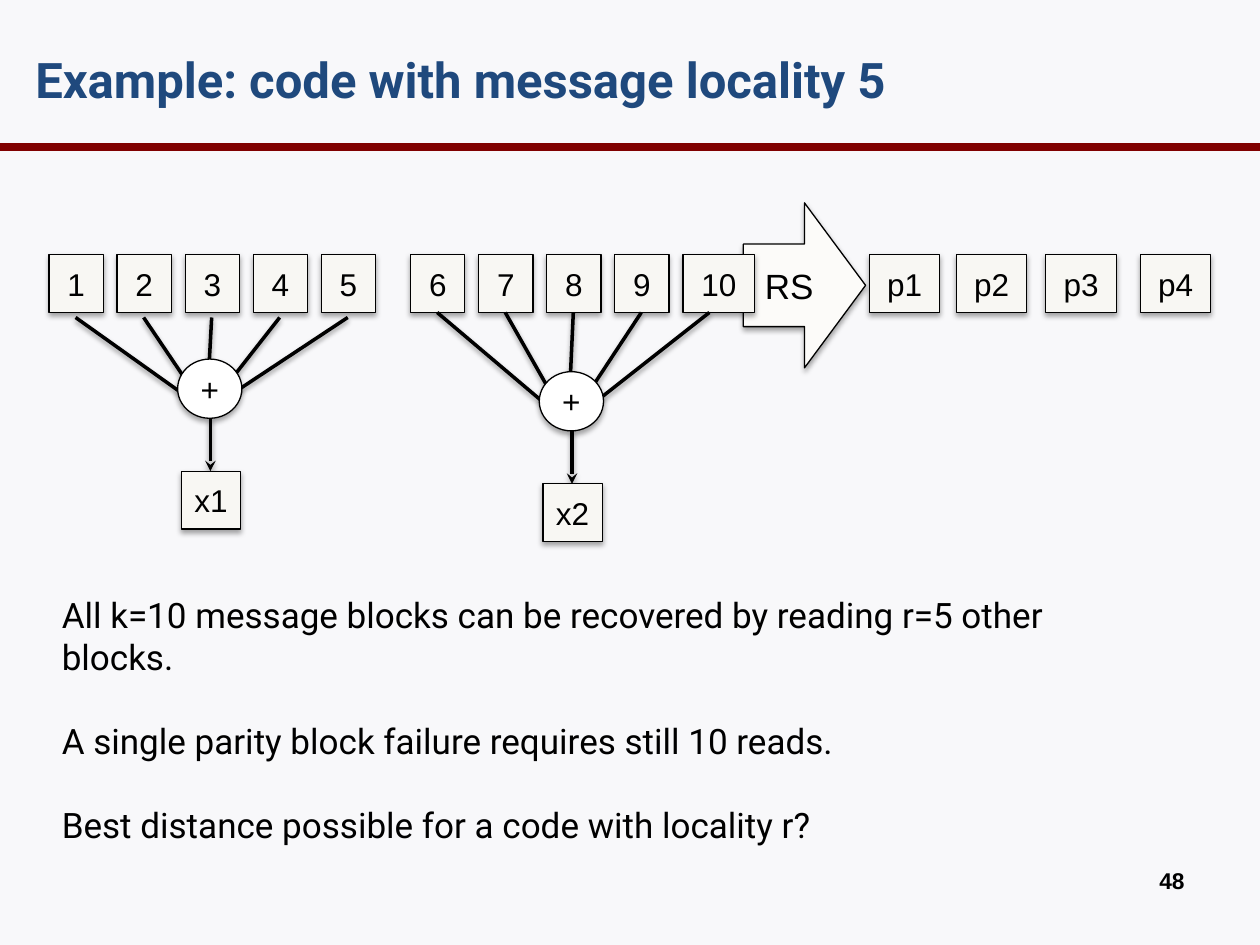
from pptx import Presentation
from pptx.dml.color import RGBColor
from pptx.enum.shapes import MSO_CONNECTOR as Conn, MSO_SHAPE as Kind
from pptx.enum.text import MSO_ANCHOR as Anchor, MSO_AUTO_SIZE as Fit, PP_ALIGN as Align
from pptx.oxml import parse_xml
from pptx.oxml.ns import nsdecls
from pptx.util import Inches, Pt

COLS, ROWS = 100, 75
STEP = 5.4
TOP, HIGH = 20.2, 4.6
INK, PAPER = "000000", "F8F7F3"
NOTES = [
    "All k=10 message blocks can be recovered by reading r=5 other blocks.",
    "A single parity block failure requires still 10 reads.",
    "Best distance possible for a code with locality r?",
]


def grid(*cells):
    return [Inches(cell / 10) for cell in cells]


def paint(hue):
    return RGBColor.from_string(hue)


def write(para, text, size, font="Arial", hue=INK, bold=False, align=Align.LEFT):
    para.alignment = align
    run = para.add_run()
    run.text = text
    run.font.size = Pt(size)
    run.font.name = font
    run.font.bold = bold
    run.font.color.rgb = paint(hue)


def shade(shape, alpha, dist):
    shape._element.spPr.append(parse_xml(
        f'<a:effectLst {nsdecls("a")}><a:outerShdw blurRad="{Pt(3.1)}" '
        f'dist="{Pt(dist)}" dir="5400000" rotWithShape="0"><a:srgbClr val="{INK}">'
        f'<a:alpha val="{alpha}000"/></a:srgbClr></a:outerShdw></a:effectLst>'))


def block(slide, text, x, y=TOP, wide=4.3, high=HIGH, kind=Kind.RECTANGLE,
          fill=PAPER, size=18):
    shape = slide.shapes.add_shape(kind, *grid(x, y, wide, high))
    shape.fill.solid()
    shape.fill.fore_color.rgb = paint(fill)
    shape.line.color.rgb = paint(INK)
    shape.line.width = Pt(0.75)
    shade(shape, 35, 1.8)
    frame = shape.text_frame
    frame.word_wrap = False
    frame.vertical_anchor = Anchor.MIDDLE
    write(frame.paragraphs[0], text, size, align=Align.CENTER)


def line(slide, x1, y1, x2, y2, hue=INK, width=2, head=False, flat=False):
    edge = slide.shapes.add_connector(Conn.STRAIGHT, *grid(x1, y1, x2, y2))
    edge.line.color.rgb = paint(hue)
    edge.line.width = Pt(width)
    if head:
        edge.line._get_or_add_ln().append(
            parse_xml(f'<a:tailEnd {nsdecls("a")} type="stealth"/>'))
    if flat:
        edge._element.spPr.append(parse_xml(f'<a:effectLst {nsdecls("a")}/>'))
    else:
        shade(edge, 38, 1.6)


def tree(slide, label, left, start, hub):
    for i in range(5):
        line(slide, left + 2.1 + i * STEP, start, left + 12.5, hub + 4.1)
    line(slide, left + 12.8, hub + 4.7, left + 12.8, hub + 8.9, head=True)
    block(slide, "+", left + 10.2, hub, 5.1, 4.7, Kind.OVAL, "FFFFFF")
    block(slide, label, left + 10.5, hub + 8.9, 4.7)


def place(shape, *cells):
    shape.left, shape.top, shape.width, shape.height = grid(*cells)
    frame = shape.text_frame
    frame.word_wrap = True
    frame.auto_size = Fit.NONE
    return frame


def title(slide, text):
    frame = place(slide.shapes.title, 1.8, 0, 92.5, 12.5)
    frame.vertical_anchor = Anchor.MIDDLE
    write(frame.paragraphs[0], text, 28, "Roboto", "1F497D", True)


def body(slide, items):
    frame = place(slide.placeholders[1], 3.9, 46.6, 84.5, 21.2)
    for i, item in enumerate(items):
        para = frame.add_paragraph() if i else frame.paragraphs[0]
        props = para._p.get_or_add_pPr()
        props.set("marL", "0")
        props.set("indent", "0")
        props.append(parse_xml(f'<a:buNone {nsdecls("a")}/>'))
        para.space_before = Pt(24 if i else 0)
        write(para, item, 20, "Roboto")


def number(slide, text):
    frame = place(slide.shapes.add_textbox(0, 0, 0, 0), 71.7, 68.3, 23.3, 5.2)
    write(frame.paragraphs[0], text, 13, bold=True, align=Align.RIGHT)


def main():
    deck = Presentation()
    deck.slide_width, deck.slide_height = grid(COLS, ROWS)
    slide = deck.slides.add_slide(deck.slide_layouts[1])
    slide.background.fill.solid()
    slide.background.fill.fore_color.rgb = paint("F8F8FA")
    line(slide, 0, 11.7, COLS, 11.7, "800000", 4.5, flat=True)
    title(slide, "Example: code with message locality 5")
    block(slide, "RS", 59, 16.1, 9.7, 13.1, Kind.RIGHT_ARROW, "FCFBF9", 20)
    for i in range(10):
        left = 3.9 if i < 5 else 32.6
        block(slide, str(i + 1), left + i % 5 * STEP, wide=5.7 if i == 9 else 4.3)
    for i, x in enumerate([69, 75.9, 83, 90.5], 1):
        block(slide, f"p{i}", x, wide=5.6)
    tree(slide, "x1", 3.9, 25.2, 28.5)
    tree(slide, "x2", 32.6, 24.8, 29.5)
    body(slide, NOTES)
    number(slide, "48")
    deck.save("out.pptx")


if __name__ == "__main__":
    main()
